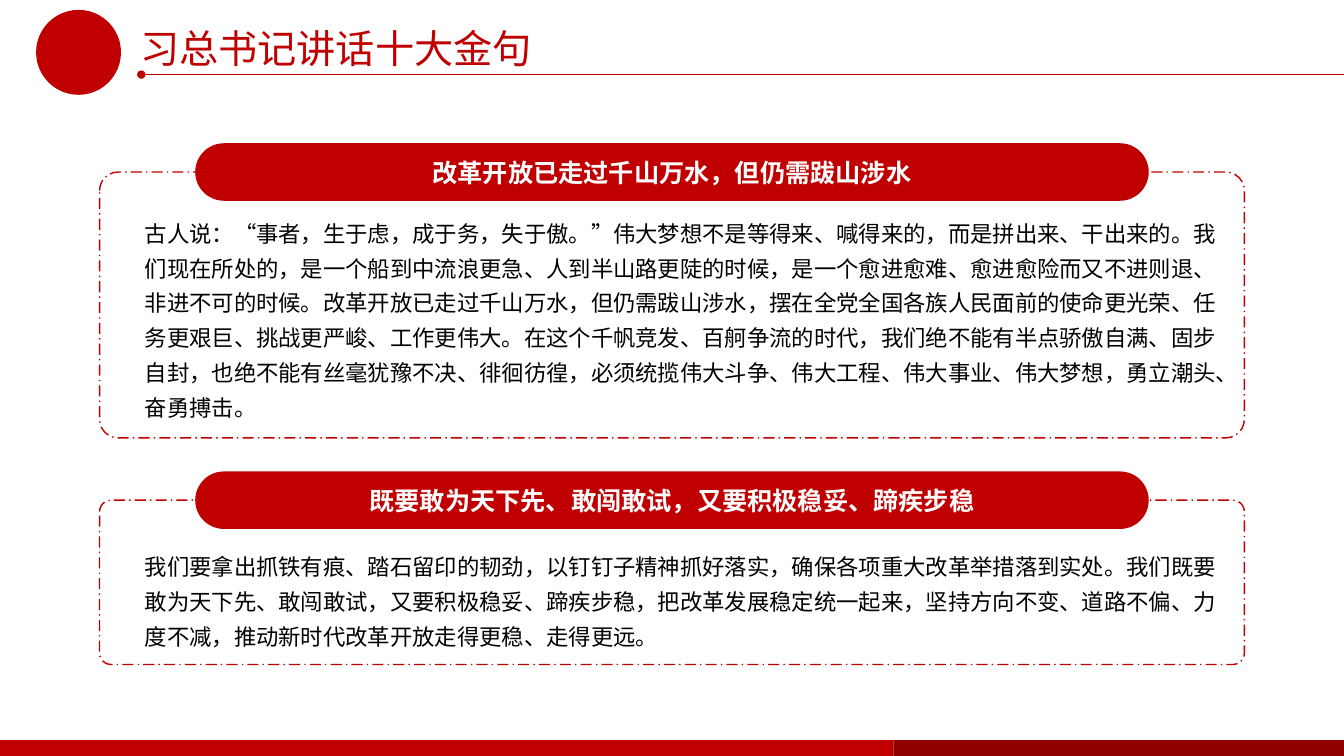
from dataclasses import dataclass

from lxml import etree
from pptx import Presentation
from pptx.dml.color import RGBColor
from pptx.enum.dml import MSO_LINE
from pptx.enum.lang import MSO_LANGUAGE_ID
from pptx.enum.shapes import MSO_CONNECTOR, MSO_SHAPE
from pptx.enum.text import MSO_ANCHOR, PP_ALIGN
from pptx.oxml.ns import qn
from pptx.util import Cm, Pt

RECTANGLE = MSO_SHAPE.RECTANGLE
ROUNDED = MSO_SHAPE.ROUNDED_RECTANGLE
OVAL = MSO_SHAPE.OVAL
STRAIGHT = MSO_CONNECTOR.STRAIGHT
LONG_DASH_DOT = MSO_LINE.LONG_DASH_DOT
LEFT, CENTER = PP_ALIGN.LEFT, PP_ALIGN.CENTER
TOP, MIDDLE = MSO_ANCHOR.TOP, MSO_ANCHOR.MIDDLE
CHINESE = MSO_LANGUAGE_ID.SIMPLIFIED_CHINESE
TITLE_ONLY = 5


@dataclass(frozen=True)
class Theme:
    font: str = "Noto Sans CJK SC"
    red: RGBColor = RGBColor(0xC0, 0x00, 0x00)
    dark_red: RGBColor = RGBColor(0x90, 0x00, 0x00)
    white: RGBColor = RGBColor(0xFF, 0xFF, 0xFF)
    black: RGBColor = RGBColor(0x00, 0x00, 0x00)
    title_size: Pt = Pt(28)
    heading_size: Pt = Pt(18)
    body_size: Pt = Pt(16)
    line_width: Pt = Pt(1)


THEME = Theme()
PAGE_WIDTH, PAGE_HEIGHT = 33.87, 19.05

TITLE = "习总书记讲话十大金句"
QUOTES = [
    {
        "top": 3.61,
        "frame_height": 6.7,
        "text_offset": 1.6,
        "text_height": 5.51,
        "heading": "改革开放已走过千山万水，但仍需跋山涉水",
        "body": "古人说：“事者，生于虑，成于务，失于傲。”伟大梦想不是等得来、喊得来的，"
                "而是拼出来、干出来的。我们现在所处的，是一个船到中流浪更急、"
                "人到半山路更陡的时候，是一个愈进愈难、愈进愈险而又不进则退、"
                "非进不可的时候。改革开放已走过千山万水，但仍需跋山涉水，"
                "摆在全党全国各族人民面前的使命更光荣、任务更艰巨、挑战更严峻、"
                "工作更伟大。在这个千帆竞发、百舸争流的时代，我们绝不能有半点骄傲自满、"
                "固步自封，也绝不能有丝毫犹豫不决、徘徊彷徨，必须统揽伟大斗争、"
                "伟大工程、伟大事业、伟大梦想，勇立潮头、奋勇搏击。",
    },
    {
        "top": 11.88,
        "frame_height": 4.14,
        "text_offset": 1.73,
        "text_height": 2.84,
        "heading": "既要敢为天下先、敢闯敢试，又要积极稳妥、蹄疾步稳",
        "body": "我们要拿出抓铁有痕、踏石留印的韧劲，以钉钉子精神抓好落实，"
                "确保各项重大改革举措落到实处。我们既要敢为天下先、敢闯敢试，"
                "又要积极稳妥、蹄疾步稳，把改革发展稳定统一起来，坚持方向不变、"
                "道路不偏、力度不减，推动新时代改革开放走得更稳、走得更远。",
    },
]


def place(shape, left, top, width, height):
    bounds = {"left": left, "top": top, "width": width, "height": height}
    for name, value in bounds.items():
        setattr(shape, name, Cm(value))


def write(shape, text, size, color, align=LEFT, anchor=TOP, bold=False, wrap=True, spacing=1.0):
    frame = shape.text_frame
    frame.word_wrap = wrap
    frame.vertical_anchor = anchor
    para = frame.paragraphs[0]
    para.alignment = align
    para.line_spacing = spacing
    span = para.add_run()
    span.text = text
    span.font.color.rgb = color
    font_format = {"name": THEME.font, "size": size, "bold": bold, "language_id": CHINESE}
    for name, value in font_format.items():
        setattr(span.font, name, value)
    latin = span._r.rPr.find(qn("a:latin"))
    east_asian = etree.Element(qn("a:ea"), typeface=THEME.font)
    latin.addnext(east_asian)


def add_solid(page, kind, color, left, top, width, height):
    shape = page.shapes.add_shape(kind, Cm(left), Cm(top), Cm(width), Cm(height))
    shape.shadow.inherit = False
    shape.fill.solid()
    shape.fill.fore_color.rgb = color
    shape.line.fill.background()
    return shape


def add_frame(page, left, top, width, height):
    shape = page.shapes.add_shape(ROUNDED, Cm(left), Cm(top), Cm(width), Cm(height))
    shape.shadow.inherit = False
    shape.adjustments[0] = 0.07
    shape.fill.background()
    shape.line.color.rgb = THEME.red
    shape.line.width = THEME.line_width
    shape.line.dash_style = LONG_DASH_DOT


def add_title_rule(page, left, top):
    rule = page.shapes.add_connector(STRAIGHT, Cm(left), Cm(top), Cm(PAGE_WIDTH), Cm(top))
    rule.line.color.rgb = THEME.red
    rule.line.width = THEME.line_width
    properties = rule._element.spPr
    etree.SubElement(properties.find(qn("a:ln")), qn("a:headEnd"), type="oval")
    etree.SubElement(properties, qn("a:effectLst"))


def add_header(page):
    add_title_rule(page, 3.56, 1.88)
    add_solid(page, OVAL, THEME.red, 0.91, 0.25, 2.14, 2.14)
    title = page.shapes.title
    place(title, 3.28, 0.48, 11, 1.45)
    write(title, TITLE, THEME.title_size, THEME.red, anchor=MIDDLE, wrap=False)


def add_footer(page):
    height, split = 0.4, 22.52
    top = PAGE_HEIGHT - height
    add_solid(page, RECTANGLE, THEME.red, 0, top, split, height)
    add_solid(page, RECTANGLE, THEME.dark_red, split, top, PAGE_WIDTH - split, height)


def add_quote(page, quote):
    top, banner_height = quote["top"], 1.45
    frame_top = top + banner_height / 2
    add_frame(page, 2.51, frame_top, 28.85, quote["frame_height"])
    banner = add_solid(page, ROUNDED, THEME.red, 4.92, top, 24.03, banner_height)
    banner.adjustments[0] = 0.5
    write(banner, quote["heading"], THEME.heading_size, THEME.white,
          align=CENTER, anchor=MIDDLE, bold=True)
    box = page.shapes.add_textbox(Cm(3.4), Cm(top + quote["text_offset"]),
                                  Cm(27.58), Cm(quote["text_height"]))
    write(box, quote["body"], THEME.body_size, THEME.black, spacing=1.3)


def main():
    deck = Presentation()
    deck.slide_width, deck.slide_height = Cm(PAGE_WIDTH), Cm(PAGE_HEIGHT)
    page = deck.slides.add_slide(deck.slide_layouts[TITLE_ONLY])
    add_header(page)
    add_footer(page)
    for quote in QUOTES:
        add_quote(page, quote)
    deck.save("out.pptx")


if __name__ == "__main__":
    main()
